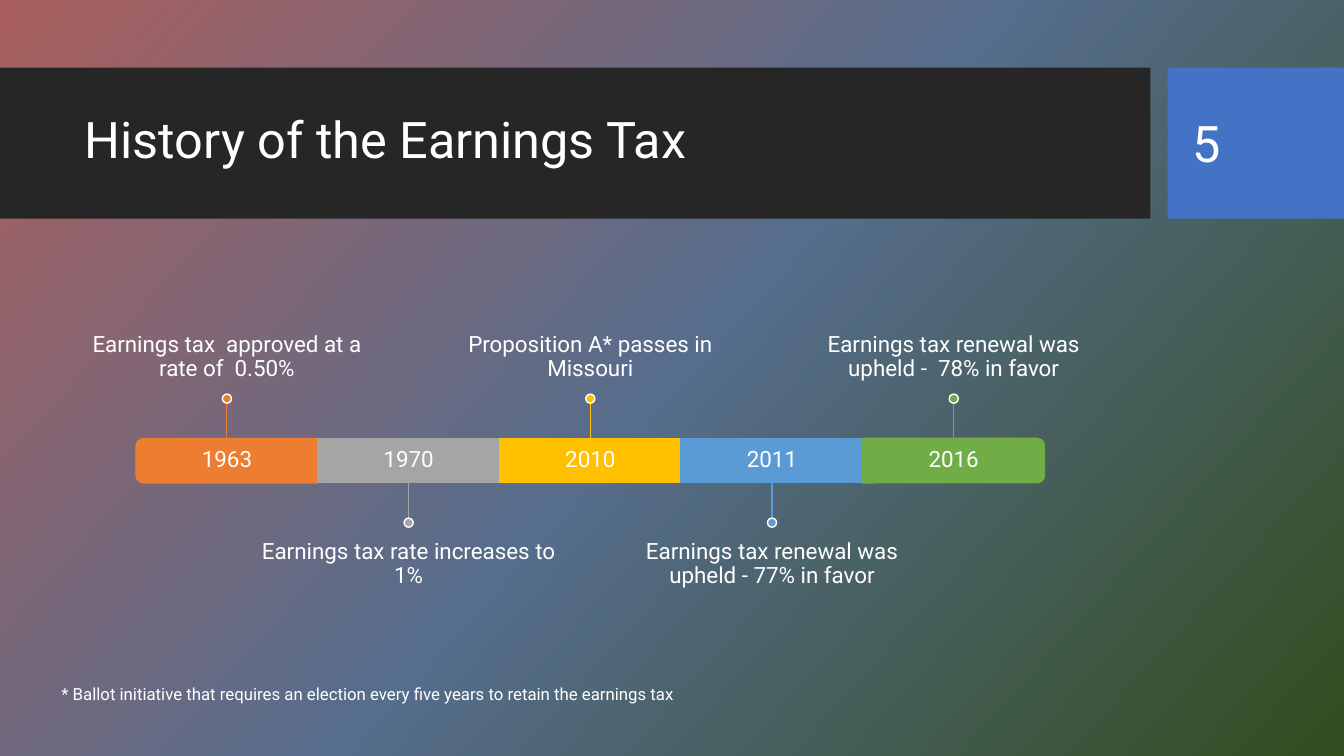
from copy import deepcopy

from lxml import etree
from pptx import Presentation
from pptx.dml.color import RGBColor
from pptx.enum.shapes import MSO_CONNECTOR, MSO_SHAPE
from pptx.enum.text import MSO_ANCHOR, MSO_AUTO_SIZE, PP_ALIGN
from pptx.oxml.ns import qn
from pptx.util import Inches, Pt

RECT, OVAL = MSO_SHAPE.RECTANGLE, MSO_SHAPE.OVAL
ROUNDED_END = MSO_SHAPE.ROUND_2_SAME_RECTANGLE
STRAIGHT = MSO_CONNECTOR.STRAIGHT
TOP, MIDDLE, BOTTOM = MSO_ANCHOR.TOP, MSO_ANCHOR.MIDDLE, MSO_ANCHOR.BOTTOM
LEFT, CENTER = PP_ALIGN.LEFT, PP_ALIGN.CENTER
NO_AUTOFIT = MSO_AUTO_SIZE.NONE

FONT, WHITE = "Roboto", "FFFFFF"
BACKGROUND = [(0, "A95F5E"), (0.5, "566D8C"), (1, "324D1E")]
MILESTONES = [
    ("1963", "Earnings tax  approved at a rate of  0.50%", "ED7D31"),
    ("1970", "Earnings tax rate increases to 1%", "A5A5A5"),
    ("2010", "Proposition A* passes in Missouri", "FFC000"),
    ("2011", "Earnings tax renewal was upheld - 77% in favor", "5B9BD5"),
    ("2016", "Earnings tax renewal was upheld -  78% in favor", "70AD47"),
]


def rgb(value):
    return RGBColor.from_string(value)


def write(holder, text, size=16, align=LEFT, anchor=MIDDLE,
          insets=(0.1, 0.05, 0.1, 0.05), spacing=0.9):
    frame = holder.text_frame
    frame.word_wrap = True
    frame.auto_size = NO_AUTOFIT
    frame.vertical_anchor = anchor
    (frame.margin_left, frame.margin_top,
     frame.margin_right, frame.margin_bottom) = map(Inches, insets)
    paragraph = frame.paragraphs[0]
    paragraph.alignment = align
    paragraph.line_spacing = spacing
    run = paragraph.add_run()
    run.text = text
    run.font.name = FONT
    run.font.size = Pt(size)
    run.font.color.rgb = rgb(WHITE)


def add_text(slide, box, text, **form):
    write(slide.shapes.add_textbox(*map(Inches, box)), text, **form)


def add_block(slide, kind, box, fill, line=None):
    block = slide.shapes.add_shape(kind, *map(Inches, box))
    block.shadow.inherit = False
    block.fill.solid()
    block.fill.fore_color.rgb = rgb(fill)
    if line:
        block.line.color.rgb = rgb(line)
        block.line.width = Pt(1)
    else:
        block.line.fill.background()
    return block


def add_stem(slide, x, start, end, color):
    stem = slide.shapes.add_connector(
        STRAIGHT, Inches(x), Inches(start), Inches(x), Inches(end))
    stem.line.color.rgb = rgb(color)
    stem.line.width = Pt(0.75)
    etree.SubElement(stem.element.spPr, qn("a:effectLst"))


def paint_background(slide):
    fill = slide.background.fill
    fill.gradient()
    fill.gradient_angle = 318
    stop_list = next(slide.element.iter(qn("a:gsLst")))
    stop_list.append(deepcopy(stop_list[0]))
    for stop, (position, color) in zip(fill.gradient_stops, BACKGROUND):
        stop.position = position
        stop.color.rgb = rgb(color)


def add_header(slide, box, title, number):
    left, top, width, height = box
    number_width, gap = 1.75, 0.17
    number_left = left + width - number_width
    # Title band and number tile
    add_block(slide, RECT, (left, top, width - number_width - gap, height), "262626")
    add_block(slide, RECT, (number_left, top, number_width, height), "4472C4")
    # Title, brought in front of its band
    heading = slide.shapes.title
    heading.left, heading.top = Inches(left + 0.74), Inches(top + 0.15)
    heading.width, heading.height = Inches(10.51), Inches(1.18)
    write(heading, title, size=36)
    slide.shapes.element.append(heading.element)
    add_text(slide, (number_left + 0.15, top + 0.15, 1.26, 1.19), number,
             size=36, spacing=1)


def add_milestone(slide, box, milestone, above, turn):
    left, top, width, height = box
    year, event, color = milestone
    center, middle = left + width / 2, top + height / 2
    # Bar segment; the outer ones are upright shapes turned on their side
    if turn:
        bar = (center - height / 2, middle - width / 2, height, width)
        add_block(slide, ROUNDED_END, bar, color, color).rotation = turn
    else:
        add_block(slide, RECT, box, color, color)
    add_text(slide, box, year, align=CENTER, insets=(0.13,) * 4)
    # Event, stem and dot
    stem, dot, event_width, event_height = 0.35, 0.09, 3, 1.55
    if above:
        edge, tip = top, top - stem
        dot_top = tip - dot
        event_top, anchor, insets = dot_top - event_height, BOTTOM, (0, 0, 0, 0.13)
    else:
        edge, tip = top + height, top + height + stem
        dot_top = tip
        event_top, anchor, insets = tip + dot, TOP, (0, 0.13, 0, 0)
    add_text(slide, (center - event_width / 2, event_top, event_width, event_height),
             event, align=CENTER, anchor=anchor, insets=insets)
    add_stem(slide, center, edge, tip, color)
    add_block(slide, OVAL, (center - dot / 2, dot_top, dot, dot), color, WHITE)


def add_timeline(slide, box):
    left, top, width, height = box
    step = width / len(MILESTONES)
    turns = {0: 270, len(MILESTONES) - 1: 90}
    for i, milestone in enumerate(MILESTONES):
        add_milestone(slide, (left + i * step, top, step, height), milestone,
                      above=i % 2 == 0, turn=turns.get(i, 0))


def main():
    deck = Presentation()
    deck.slide_width, deck.slide_height = Inches(13.33), Inches(7.5)
    slide = deck.slides.add_slide(deck.slide_layouts[5])
    paint_background(slide)
    add_header(slide, (0, 0.67, 13.33, 1.5), "History of the Earnings Tax", "5")
    add_timeline(slide, (1.35, 4.35, 9.01, 0.44))
    # Footnote
    add_text(slide, (0.51, 6.68, 9.18, 0.4),
             "* Ballot initiative that requires an election every five years "
             "to retain the earnings tax", size=12, spacing=1)
    deck.save("out.pptx")


if __name__ == "__main__":
    main()
